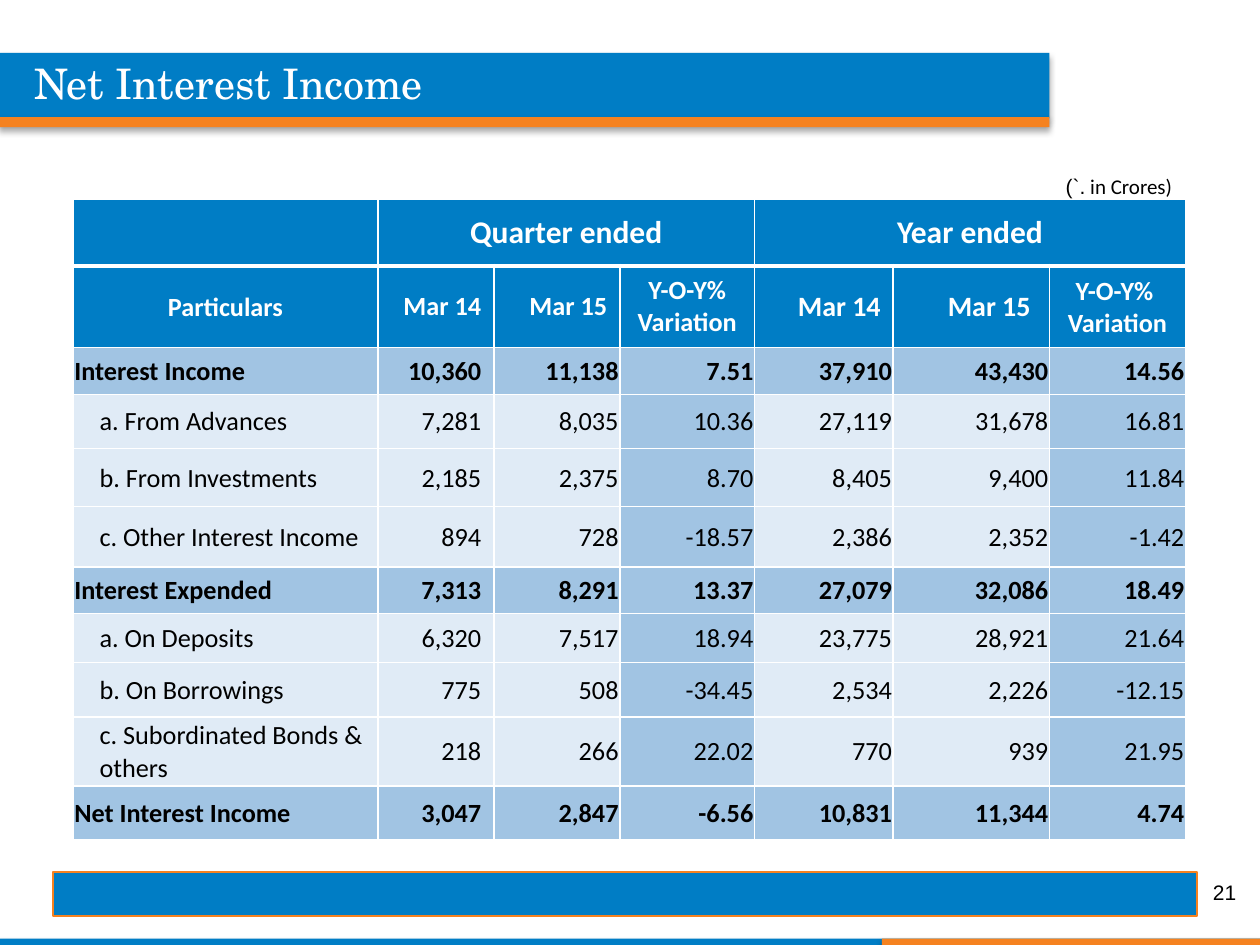
import pptx
import pptx.util
import pptx.oxml
import pptx.dml.color
import pptx.enum.shapes
import pptx.enum.text
from pptx.util import Inches

COLORS = {"blue": "007DC5", "orange": "F58220", "white": "FFFFFF",
          "black": "000000", "total": "A1C4E3", "detail": "E0EBF6"}
ALIGN = pptx.enum.text.PP_ALIGN
ANCHOR = pptx.enum.text.MSO_ANCHOR
NS = 'xmlns:a="http://schemas.openxmlformats.org/drawingml/2006/main"'
SHADOW = (f'<a:effectLst {NS}><a:outerShdw blurRad="44450" dist="27940" dir="5400000" '
          'algn="ctr" rotWithShape="0"><a:srgbClr val="000000"><a:alpha val="32000"/>'
          '</a:srgbClr></a:outerShdw></a:effectLst>')

WIDE = (0.1, 0.05, 0.1, 0.05)
TIGHT = (0.01, 0.01, 0.01, 0)
FIRST_NUMBER = (0.01, 0.01, 0.1, 0)

COL_WIDTHS = [2.42, 0.92, 1, 1.07, 1.1, 1.24, 1.08]
ROW_HEIGHTS = [0.53, 0.65, 0.37, 0.43, 0.46, 0.48, 0.37, 0.39, 0.43, 0.55, 0.43]
VARIATION_COLS = (3, 6)

# Text, size, alignment and insets of each column heading
HEADINGS = [
    ("Particulars", 15, ALIGN.CENTER, TIGHT),
    ("Mar 14", 15, ALIGN.RIGHT, WIDE),
    ("Mar 15", 15, ALIGN.RIGHT, WIDE),
    ("Y-O-Y% Variation", 15, ALIGN.CENTER, WIDE),
    ("Mar 14", 16, ALIGN.RIGHT, WIDE),
    ("Mar 15 ", 16, ALIGN.RIGHT, WIDE),
    ("Y-O-Y% \nVariation", 15, ALIGN.CENTER, TIGHT),
]
# Whether the row is a total, then its cells
ROWS = [
    (True, ["Interest Income", "10,360", "11,138", "7.51", "37,910", "43,430", "14.56"]),
    (False, ["a. From Advances", "7,281", "8,035", "10.36", "27,119", "31,678", "16.81"]),
    (False, ["b. From Investments", "2,185", "2,375", "8.70", "8,405", "9,400", "11.84"]),
    (False, ["c. Other Interest Income", "894", "728", "-18.57", "2,386", "2,352", "-1.42"]),
    (True, ["Interest Expended", "7,313", "8,291", "13.37", "27,079", "32,086", "18.49"]),
    (False, ["a. On Deposits", "6,320", "7,517", "18.94", "23,775", "28,921", "21.64"]),
    (False, ["b. On Borrowings", "775", "508", "-34.45", "2,534", "2,226", "-12.15"]),
    (False, ["c. Subordinated Bonds & others", "218", "266", "22.02", "770", "939", "21.95"]),
    (True, ["Net Interest Income", "3,047", "2,847", "-6.56", "10,831", "11,344", "4.74"]),
]


class Deck:
    """Holds the style and the current slide."""

    def __init__(self, prs):
        self.s = prs.slides.add_slide(prs.slide_layouts[5])

    def color(self, name):
        return pptx.dml.color.RGBColor.from_string(COLORS[name])

    def font(self, font, size, color, name="Calibri", bold=False):
        font.size = pptx.util.Pt(size)
        font.name = name
        font.bold = bold
        font.color.rgb = self.color(color)

    def bar(self, x, y, w, h, color, line=None):
        sp = self.s.shapes.add_shape(pptx.enum.shapes.MSO_SHAPE.RECTANGLE,
                                     Inches(x), Inches(y), Inches(w), Inches(h))
        sp.fill.solid()
        sp.fill.fore_color.rgb = self.color(color)
        if line:
            sp.shadow.inherit = False
            sp.line.color.rgb = self.color(line)
            sp.line.width = pptx.util.Pt(0.75)
        else:
            sp.line.fill.background()
            sp._element.spPr.append(pptx.oxml.parse_xml(SHADOW))

    def title(self, text, x, y, w, h):
        sp = self.s.shapes.title
        sp.left, sp.top, sp.width, sp.height = map(Inches, (x, y, w, h))
        self.s.shapes._spTree.append(sp._element)  # in front of the banner
        tf = sp.text_frame
        tf.text = text
        tf.auto_size = pptx.enum.text.MSO_AUTO_SIZE.NONE
        tf.vertical_anchor = ANCHOR.TOP
        p = tf.paragraphs[0]
        p.alignment = ALIGN.LEFT
        self.font(p.font, 24, "white", "TeX Gyre Schola")

    def text(self, x, y, w, h, runs, align=ALIGN.LEFT, anchor=ANCHOR.TOP, wrap=True):
        tf = self.s.shapes.add_textbox(Inches(x), Inches(y), Inches(w), Inches(h)).text_frame
        tf.word_wrap = wrap
        tf.vertical_anchor = anchor
        p = tf.paragraphs[0]
        p.alignment = align
        for text, name in runs:
            r = p.add_run()
            r.text = text
            self.font(r.font, 12, "black", name)

    def table(self, x, y, widths, heights):
        frame = self.s.shapes.add_table(len(heights), len(widths), Inches(x), Inches(y),
                                        Inches(sum(widths)), Inches(sum(heights)))
        table = frame.table
        table.first_row = table.horz_banding = False
        for col, w in zip(table.columns, widths):
            col.width = Inches(w)
        for row, h in zip(table.rows, heights):
            row.height = Inches(h)
        return table

    def cell(self, cell, text, fill, size=15, color="black", bold=False, align=ALIGN.RIGHT,
             insets=TIGHT, indent=0, top=1, bottom=1):
        tc_pr = cell._tc.get_or_add_tcPr()
        for side, width in (("L", 1), ("R", 1), ("T", top), ("B", bottom)):
            tc_pr.append(pptx.oxml.parse_xml(
                f'<a:ln{side} {NS} w="{pptx.util.Pt(width)}"><a:solidFill>'
                f'<a:srgbClr val="{COLORS["white"]}"/></a:solidFill></a:ln{side}>'))
        cell.fill.solid()
        cell.fill.fore_color.rgb = self.color(fill)
        cell.vertical_anchor = ANCHOR.MIDDLE
        (cell.margin_left, cell.margin_top,
         cell.margin_right, cell.margin_bottom) = map(Inches, insets)
        if not text:
            return
        cell.text = text
        for p in cell.text_frame.paragraphs:
            p.alignment = align
            if indent:
                p._p.get_or_add_pPr().set("marL", str(Inches(indent)))
            self.font(p.font, size, color, bold=bold)


def main():
    prs = pptx.Presentation()
    prs.slide_width, prs.slide_height = Inches(10), Inches(7.5)
    deck = Deck(prs)

    # Bottom strip, title banner and footer bar
    deck.bar(0, 7.45, 10, 0.05, "blue")
    deck.bar(7, 7.45, 3, 0.05, "orange")
    deck.bar(0, 0.42, 8.33, 0.52, "blue")
    deck.bar(0, 0.93, 8.33, 0.08, "orange")
    deck.bar(0.42, 6.92, 9.08, 0.35, "blue", line="orange")

    # Table headings
    table = deck.table(0.58, 1.58, COL_WIDTHS, ROW_HEIGHTS)
    periods = {1: "Quarter ended", 4: "Year ended"}
    for c, (text, size, align, insets) in enumerate(HEADINGS):
        deck.cell(table.cell(0, c), periods.get(c), "blue", 18, "white", True,
                  ALIGN.CENTER, WIDE, bottom=3)
        deck.cell(table.cell(1, c), text, "blue", size, "white", True, align, insets, top=3)
    for c in periods:
        table.cell(0, c).merge(table.cell(0, c + 2))

    # Table figures
    for r, (is_total, values) in enumerate(ROWS, start=2):
        for c, value in enumerate(values):
            shaded = is_total or c in VARIATION_COLS
            deck.cell(table.cell(r, c), value, "total" if shaded else "detail", bold=is_total,
                      align=ALIGN.RIGHT if c else ALIGN.LEFT,
                      insets=FIRST_NUMBER if c == 1 else TIGHT,
                      indent=0 if c or is_total else 0.2)

    # Unit note, title and page number
    deck.text(8.36, 1.33, 1.16, 0.3, [("(`.", "Arial"), (" in Crores)", "Calibri")], wrap=False)
    deck.title("Net Interest Income", 0.17, 0.41, 6.75, 0.5)
    deck.text(7.58, 6.88, 2.33, 0.4, [("21", "Arial")], ALIGN.RIGHT, ANCHOR.MIDDLE)

    prs.save("out.pptx")


if __name__ == "__main__":
    main()
